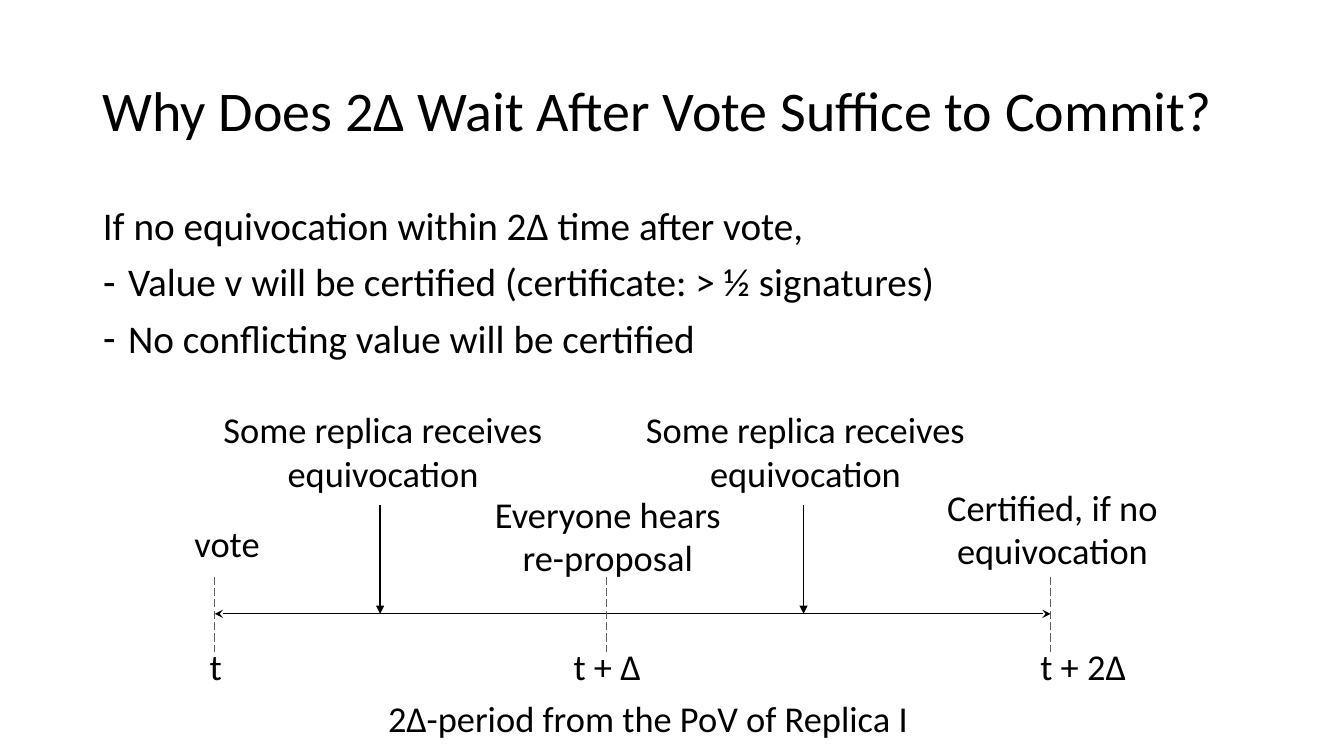
from lxml.etree import SubElement
from pptx import Presentation
from pptx.dml.color import RGBColor
from pptx.enum.dml import MSO_LINE
from pptx.enum.shapes import MSO_CONNECTOR
from pptx.enum.text import MSO_ANCHOR, MSO_AUTO_SIZE, PP_ALIGN
from pptx.oxml.ns import qn
from pptx.util import Inches, Pt

BLACK = RGBColor(0x00, 0x00, 0x00)
GREY = RGBColor(0x63, 0x5E, 0x5D)
FONT = "Calibri"

AXIS_Y = 6.09
TICK_TOP, TICK_BOTTOM = 5.72, 6.47
VOTE_X, HEARD_X, CERTIFIED_X = 2.13, 6.02, 10.42


def place(shape, left, top, width, height):
    shape.left, shape.top = Inches(left), Inches(top)
    shape.width, shape.height = Inches(width), Inches(height)


def write(paragraph, text, *, size=26, align=PP_ALIGN.LEFT, spacing=None,
          before=0, bullet=None, indent=0):
    properties = paragraph._p.get_or_add_pPr()
    properties.set("marL", str(Inches(indent)))
    properties.set("indent", str(-Inches(indent)))
    if bullet:
        SubElement(properties, qn("a:buChar"), char=bullet)
    else:
        SubElement(properties, qn("a:buNone"))
    paragraph.alignment = align
    paragraph.space_before = Pt(before)
    if spacing:
        paragraph.line_spacing = spacing
    run = paragraph.add_run()
    run.text = text
    run.font.size = Pt(size)
    run.font.name = FONT
    run.font.color.rgb = BLACK


def add_label(slide, text, left, top, width, height=0.54, wrap=True):
    label = slide.shapes.add_textbox(Inches(left), Inches(top),
                                     Inches(width), Inches(height))
    frame = label.text_frame
    frame.word_wrap = wrap
    frame.auto_size = MSO_AUTO_SIZE.SHAPE_TO_FIT_TEXT
    write(frame.paragraphs[0], text,
          align=PP_ALIGN.CENTER if wrap else PP_ALIGN.LEFT)


def add_line(slide, start, end, color=BLACK, width=0.75, dash=None,
             head=None, tail=None):
    connector = slide.shapes.add_connector(
        MSO_CONNECTOR.STRAIGHT, *map(Inches, start + end))
    connector.line.color.rgb = color
    connector.line.width = Pt(width)
    if dash:
        connector.line.dash_style = dash
    properties = connector._element.spPr
    outline = properties.find(qn("a:ln"))
    for tag, arrow in (("a:headEnd", head), ("a:tailEnd", tail)):
        if arrow:
            SubElement(outline, qn(tag), type=arrow)
    SubElement(properties, qn("a:effectLst"))


def add_event(slide, x, label_left):
    add_label(slide, "Some replica receives equivocation",
              label_left, 3.99, 3.48, 0.98)
    add_line(slide, (x, 5.01), (x, AXIS_Y), width=1, tail="triangle")


def fill_title(slide):
    title = slide.shapes.title
    place(title, 0.92, 0.4, 11.5, 1.45)
    title.text_frame.vertical_anchor = MSO_ANCHOR.MIDDLE
    title.text_frame.auto_size = MSO_AUTO_SIZE.NONE
    write(title.text_frame.paragraphs[0],
          "Why Does 2Δ Wait After Vote Suffice to Commit?",
          size=40, spacing=0.9)


def fill_claims(slide):
    body = slide.placeholders[1]
    place(body, 0.92, 2, 11.5, 4.76)
    frame = body.text_frame
    frame.auto_size = MSO_AUTO_SIZE.NONE
    write(frame.paragraphs[0], "If no equivocation within 2Δ time after vote,",
          size=28, spacing=0.9)
    for claim in ("Value v will be certified (certificate: > ½ signatures)",
                  "No conflicting value will be certified"):
        write(frame.add_paragraph(), claim, size=28, spacing=0.9, before=10,
              bullet="-", indent=0.25)


def main():
    presentation = Presentation()
    presentation.slide_width = Inches(13.33)
    presentation.slide_height = Inches(7.5)
    slide = presentation.slides.add_slide(presentation.slide_layouts[1])

    fill_title(slide)
    fill_claims(slide)

    # Time axis and its marks
    add_line(slide, (VOTE_X, AXIS_Y), (CERTIFIED_X, AXIS_Y),
             head="stealth", tail="stealth")
    for x, time, left, width in ((VOTE_X, "t", 1.98, 0.32),
                                 (HEARD_X, "t + Δ", 5.59, 0.87),
                                 (CERTIFIED_X, "t + 2Δ", 10.22, 1.06)):
        add_line(slide, (x, TICK_TOP), (x, TICK_BOTTOM), color=GREY,
                 dash=MSO_LINE.LONG_DASH)
        add_label(slide, time, left, 6.34, width, wrap=False)

    # What happens at each mark
    add_label(slide, "vote", 1.83, 5.12, 0.85, wrap=False)
    add_label(slide, "Everyone hears re-proposal", 4.8, 4.83, 2.46, 0.98)
    add_label(slide, "Certified, if no equivocation", 8.96, 4.76, 2.96, 0.98)
    add_label(slide, "2Δ-period from the PoV of Replica I", 2.52, 6.86, 7.82)

    # Equivocation received in either half
    add_event(slide, 3.77, 2.06)
    add_event(slide, 7.97, 6.25)

    presentation.save("out.pptx")


if __name__ == "__main__":
    main()
